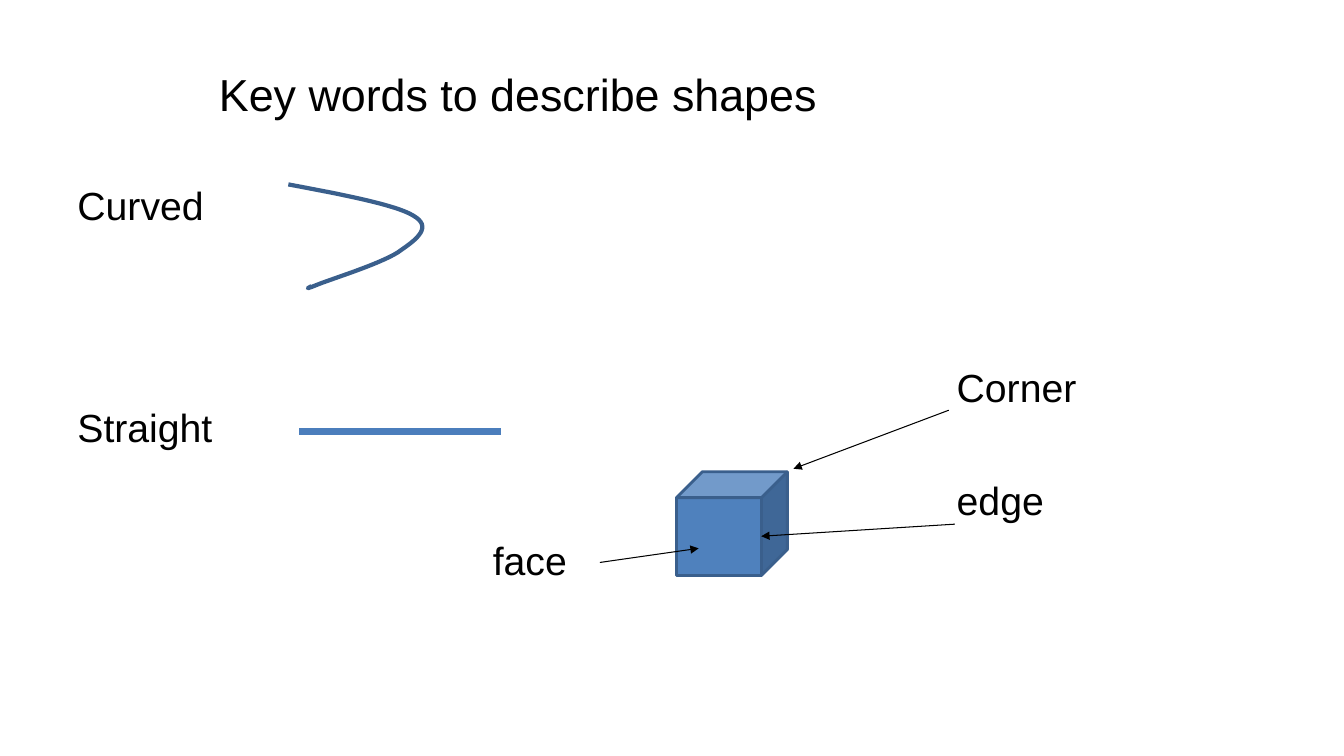
from dataclasses import dataclass

from lxml.etree import SubElement
from pptx import Presentation
from pptx.dml.color import RGBColor
from pptx.enum.shapes import MSO_CONNECTOR, MSO_SHAPE
from pptx.enum.text import MSO_ANCHOR, PP_ALIGN
from pptx.oxml.ns import qn
from pptx.util import Pt

PX = 9144


@dataclass(frozen=True)
class Theme:
    font: str = "Arial"
    ink: str = "000000"
    face: str = "4F81BD"
    outline: str = "3A5F8C"
    straight: str = "4B7EBC"
    title: int = 32
    body: int = 28


class ShapeWords:
    def __init__(self, slide, theme):
        self.shapes = slide.shapes
        self.theme = theme

    def text(self, lines, box, size, align=PP_ALIGN.LEFT,
             anchor=MSO_ANCHOR.TOP, gap=0):
        frame = self.shapes.add_textbox(*(v * PX for v in box)).text_frame
        frame.word_wrap = True
        frame.vertical_anchor = anchor
        for index, line in enumerate(lines):
            paragraph = frame.add_paragraph() if index else frame.paragraphs[0]
            paragraph.alignment = align
            paragraph.space_before = Pt(gap if index else 0)
            run = paragraph.add_run()
            run.text = line
            run.font.name = self.theme.font
            run.font.size = Pt(size)
            run.font.color.rgb = RGBColor.from_string(self.theme.ink)

    def stroke(self, line, color, width):
        line.color.rgb = RGBColor.from_string(color)
        line.width = Pt(width)

    def line(self, start, end, color, width, arrow=False):
        connector = self.shapes.add_connector(
            MSO_CONNECTOR.STRAIGHT, *(v * PX for v in start + end))
        self.stroke(connector.line, color, width)
        if arrow:
            SubElement(connector.line._get_or_add_ln(), qn("a:tailEnd"),
                       type="triangle")
        SubElement(connector._element.spPr, qn("a:effectLst"))

    def curve(self, start, segments, color, width, steps=16):
        points = []
        origin = start
        for bend in segments:
            a, b, c, d = (origin, *bend)
            for step in range(1, steps + 1):
                t = step / steps
                u = 1 - t
                points.append(tuple(
                    PX * (u**3 * a[i] + 3 * u * u * t * b[i]
                          + 3 * u * t * t * c[i] + t**3 * d[i])
                    for i in (0, 1)))
            origin = d
        builder = self.shapes.build_freeform(start[0] * PX, start[1] * PX)
        builder.add_line_segments(points, close=False)
        curve = builder.convert_to_shape()
        curve.shadow.inherit = False
        curve.fill.background()
        self.stroke(curve.line, color, width)

    def cube(self, box, fill, color, width):
        cube = self.shapes.add_shape(MSO_SHAPE.CUBE, *(v * PX for v in box))
        cube.shadow.inherit = False
        cube.fill.solid()
        cube.fill.fore_color.rgb = RGBColor.from_string(fill)
        self.stroke(cube.line, color, width)


def main():
    presentation = Presentation()
    presentation.slide_width = 1333 * PX
    presentation.slide_height = 750 * PX
    slide = presentation.slides.add_slide(presentation.slide_layouts[6])
    theme = Theme()
    words = ShapeWords(slide, theme)

    words.text(["Key words to describe shapes"], (67, 30, 894, 125),
               theme.title, PP_ALIGN.CENTER, MSO_ANCHOR.MIDDLE)
    words.text(["Curved", "Straight"], (67, 175, 1200, 476), theme.body, gap=125)

    bends = [
        ((339, 193), (392, 203), (410, 214)),
        ((429, 225), (414, 237), (398, 248)),
        ((383, 260), (331, 276), (316, 282)),
        ((301, 288), (305, 286), (309, 284)),
    ]
    words.curve((286, 183), bends, theme.outline, 3)
    words.line((297, 428), (497, 428), theme.straight, 4.5)
    words.cube((671, 468, 110, 103), theme.face, theme.outline, 2)

    cube_parts = [
        ("Corner", (939, 356, 151, 57), (941, 407), (787, 465)),
        ("edge", (939, 468, 228, 57), (947, 520), (755, 532)),
        ("face", (479, 527, 177, 88), (595, 558), (693, 544)),
    ]
    for part, box, start, tip in cube_parts:
        words.text([part], box, theme.body)
        words.line(start, tip, theme.ink, 0.75, arrow=True)

    presentation.save("out.pptx")


if __name__ == "__main__":
    main()
